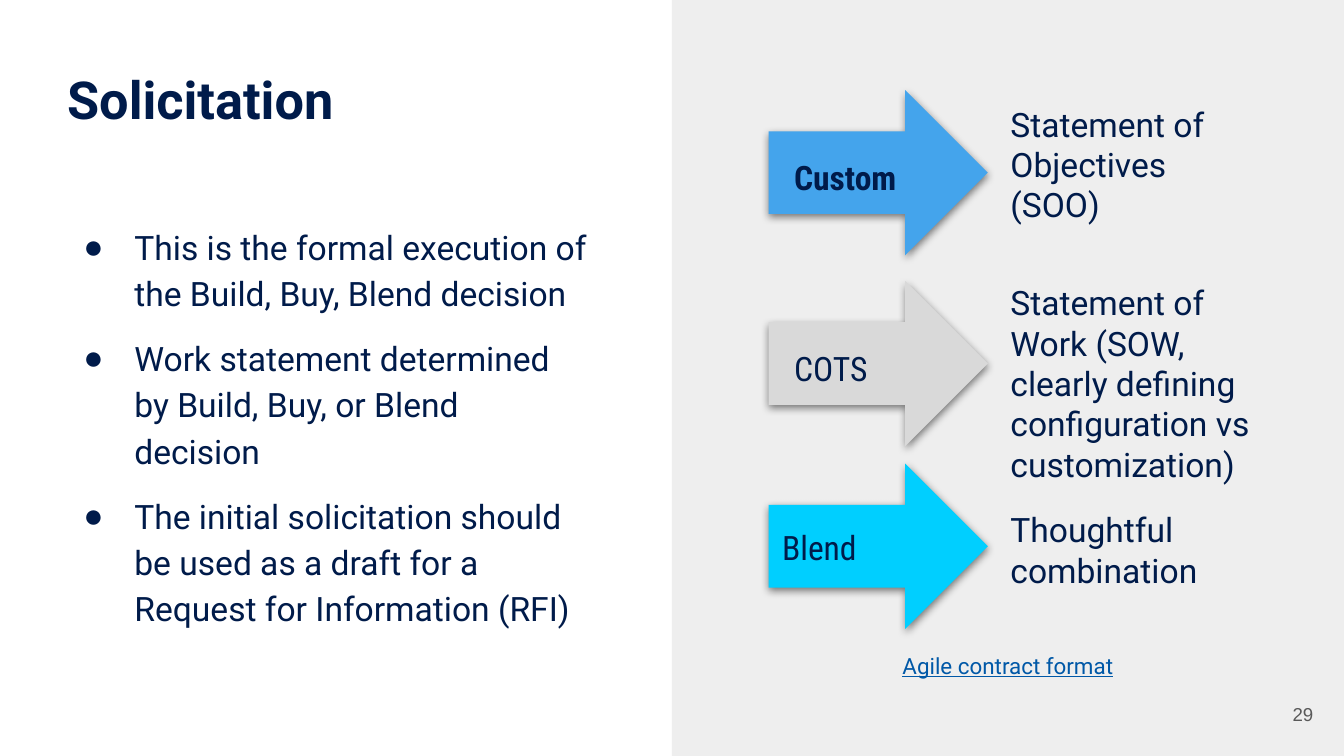
from lxml import etree
from pptx import Presentation
from pptx import util as u
from pptx.dml import color
from pptx.enum import shapes, text
from pptx.oxml import ns

SLIDE_WIDTH = 10
SLIDE_HEIGHT = SLIDE_WIDTH * 9 / 16
COLORS = {
    "navy": "001B4A", "panel": "EEEEEE", "blue": "44A4EC", "silver": "D9D9D9",
    "cyan": "00CFFF", "link": "0058A7", "number": "595959", "shadow": "000000",
}
BULLETS = [
    "This is the formal execution of the Build, Buy, Blend decision",
    "Work statement determined by Build, Buy, or Blend decision",
    "The initial solicitation should be used as a draft for a Request for Information (RFI)",
]
ROWS = [
    {"top": 0.67, "fill": "blue", "name": "Custom", "name_at": (0.09, 0.4), "bold": True,
     "result": "Statement of Objectives (SOO)", "result_top": 0, "result_width": 1.71},
    {"top": 2.09, "fill": "silver", "name": "COTS", "name_at": (0.09, 0.4), "bold": False,
     "result": "Statement of Work (SOW, clearly defining configuration vs customization)",
     "result_top": -0.09, "result_width": 2.2},
    {"top": 3.45, "fill": "cyan", "name": "Blend", "name_at": (0, 0.37), "bold": False,
     "result": "Thoughtful combination", "result_top": 0.24, "result_width": 1.71},
]


def rgb(name):
    return color.RGBColor.from_string(COLORS[name])


def add_element(parent, tag, **attributes):
    element = etree.SubElement(parent, ns.qn(tag))
    for key, value in attributes.items():
        element.set(key, str(value))
    return element


def add_text(slide, box, lines, ink="navy", margins=(0.1, 0.1, 0.1, 0.1),
             anchor=text.MSO_ANCHOR.TOP, paragraph_format=None, **font_format):
    frame = slide.shapes.add_textbox(*map(u.Inches, box)).text_frame
    sides = ("margin_left", "margin_top", "margin_right", "margin_bottom")
    frame_format = dict(zip(sides, map(u.Inches, margins)))
    frame_format.update(word_wrap=True, vertical_anchor=anchor)
    for key, value in frame_format.items():
        setattr(frame, key, value)
    font_format = {"name": "Roboto", "size": u.Pt(18), **font_format}
    for index, line in enumerate(lines):
        paragraph = frame.add_paragraph() if index else frame.paragraphs[0]
        for key, value in (paragraph_format or {}).items():
            setattr(paragraph, key, value)
        run = paragraph.add_run()
        run.text = line
        for key, value in font_format.items():
            setattr(run.font, key, value)
        run.font.color.rgb = rgb(ink)
    return frame


def add_shape(slide, kind, box, fill):
    shape = slide.shapes.add_shape(kind, *map(u.Inches, box))
    shape.shadow.inherit = False
    shape.fill.solid()
    shape.fill.fore_color.rgb = rgb(fill)
    shape.line.fill.background()
    return shape


def add_drop_shadow(shape):
    effects = shape._element.spPr.find(ns.qn("a:effectLst"))
    shadow = add_element(effects, "a:outerShdw", blurRad=u.Pt(4.5), dist=u.Pt(1.5),
                         dir=90 * 60000, algn="bl", rotWithShape=0)
    shade = add_element(shadow, "a:srgbClr", val=COLORS["shadow"])
    add_element(shade, "a:alpha", val=50000)


def add_bullet(paragraph):
    properties = paragraph._p.get_or_add_pPr()
    properties.set("marL", str(u.Inches(0.5)))
    properties.set("indent", str(u.Inches(-0.38)))
    bullet_color = add_element(properties, "a:buClr")
    add_element(bullet_color, "a:srgbClr", val=COLORS["navy"])
    add_element(properties, "a:buFont", typeface="Arial")
    add_element(properties, "a:buChar", char="●")


def add_summary(slide, left, top, width):
    add_text(slide, (left, top, width, 0.57), ["Solicitation"],
             margins=(0, 0, 0.1, 0.1), size=u.Pt(28), bold=True)
    body = add_text(slide, (left, top + 1.04, width, 3.71), BULLETS,
                    margins=(0, 0.1, 0.1, 0.1), paragraph_format={"line_spacing": 1.15})
    for index, paragraph in enumerate(body.paragraphs):
        if index:
            paragraph.space_before = u.Pt(10)
        add_bullet(paragraph)


def add_row(slide, left, top, row):
    arrow = add_shape(slide, shapes.MSO_SHAPE.RIGHT_ARROW, (left, top, 1.63, 1.23), row["fill"])
    add_drop_shadow(arrow)
    name_left, name_top = row["name_at"]
    add_text(slide, (left + name_left, top + name_top, 1.71, 0.43), [row["name"]],
             name="Roboto Condensed", bold=row["bold"])
    add_text(slide, (left + 1.7, top + row["result_top"], row["result_width"], 0.43),
             [row["result"]])


def add_panel(slide, left, top, width, height):
    add_shape(slide, shapes.MSO_SHAPE.RECTANGLE, (left, top, width, height), "panel")
    for row in ROWS:
        add_row(slide, left + 0.72, top + row["top"], row)
    add_text(slide, (left + 0.21, top + 4.75, width - 0.42, 0.4), ["Agile contract format"],
             ink="link", paragraph_format={"alignment": text.PP_ALIGN.CENTER},
             size=u.Pt(12), underline=True)
    add_text(slide, (left + 4.27, top + 5.1, 0.6, 0.43), ["29"], ink="number",
             anchor=text.MSO_ANCHOR.MIDDLE,
             paragraph_format={"alignment": text.PP_ALIGN.RIGHT}, name="Arial", size=u.Pt(10))


def main():
    presentation = Presentation()
    presentation.slide_width = u.Inches(SLIDE_WIDTH)
    presentation.slide_height = u.Inches(SLIDE_HEIGHT)
    slide = presentation.slides.add_slide(presentation.slide_layouts[6])
    add_summary(slide, 0.5, 0.5, 3.99)
    add_panel(slide, SLIDE_WIDTH / 2, 0, SLIDE_WIDTH / 2, SLIDE_HEIGHT)
    presentation.save("out.pptx")


if __name__ == "__main__":
    main()
